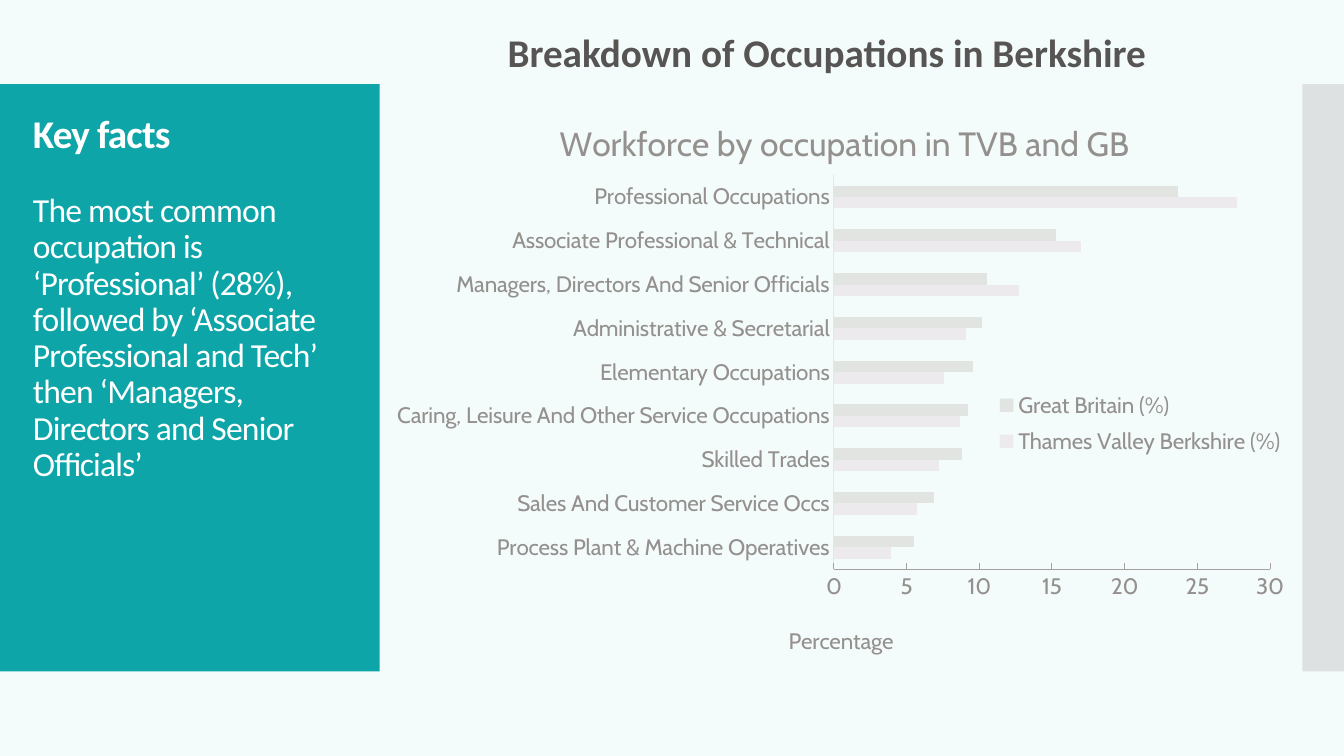
from lxml.etree import SubElement
from pptx import Presentation
from pptx.chart.data import CategoryChartData
from pptx.dml.color import RGBColor
from pptx.enum.chart import XL_CHART_TYPE, XL_LEGEND_POSITION, XL_TICK_MARK
from pptx.enum.shapes import MSO_SHAPE
from pptx.enum.text import PP_ALIGN
from pptx.oxml import parse_xml
from pptx.oxml.ns import nsdecls, qn
from pptx.util import Pt

COLORS = {
    "background": "F3FBFB",
    "teal": "0DA5A8",
    "gray": "C8C8C8",
    "white": "FFFFFF",
    "heading": "575553",
    "label": "93908E",
    "category_line": "E6E6E5",
    "value_line": "A6A19F",
    "berkshire": "ECEAED",
    "britain": "E1E4E1",
}
OCCUPATIONS = [
    ("Process Plant & Machine Operatives", 3.9, 5.5),
    ("Sales And Customer Service Occs", 5.7, 6.9),
    ("Skilled Trades", 7.2, 8.8),
    ("Caring, Leisure And Other Service Occupations", 8.7, 9.2),
    ("Elementary Occupations", 7.6, 9.6),
    ("Administrative & Secretarial", 9.1, 10.2),
    ("Managers, Directors And Senior Officials", 12.7, 10.5),
    ("Associate Professional & Technical", 17, 15.3),
    ("Professional Occupations", 27.7, 23.7),
]


def style_font(font, name, size, color, bold=False):
    font.name = name
    font.size = Pt(size)
    font.bold = bold
    font.color.rgb = RGBColor.from_string(COLORS[color])


def place_chart_part(element, inner=False, **fractions):
    for old_layout in element.findall(qn("c:layout")):
        element.remove(old_layout)
    layout = parse_xml(f"<c:layout {nsdecls('c')}><c:manualLayout/></c:layout>")
    if inner:
        SubElement(layout[0], qn("c:layoutTarget")).set("val", "inner")
    for axis in ("x", "y"):
        SubElement(layout[0], qn(f"c:{axis}Mode")).set("val", "edge")
    for key, value in fractions.items():
        SubElement(layout[0], qn(f"c:{key}")).set("val", str(value))
    overlay = element.find(qn("c:overlay"))
    if overlay is None:
        element.insert(0, layout)
    else:
        overlay.addprevious(layout)


presentation = Presentation()
presentation.slide_width = Pt(960)
presentation.slide_height = Pt(540)
slide = presentation.slides.add_slide(presentation.slide_layouts[6])
slide.background.fill.solid()
slide.background.fill.fore_color.rgb = RGBColor.from_string(COLORS["background"])

for left, width, color in [(0, 271.2, "teal"), (930.2, 29.8, "gray")]:
    panel = slide.shapes.add_shape(MSO_SHAPE.RECTANGLE, Pt(left), Pt(60), Pt(width), Pt(419.5))
    panel.shadow.inherit = False
    panel.fill.solid()
    panel.fill.fore_color.rgb = RGBColor.from_string(COLORS[color])
    panel.line.fill.background()
    if color == "gray":
        panel_color = panel.fill._xPr.find(".//" + qn("a:srgbClr"))
        SubElement(panel_color, qn("a:alpha")).set("val", "50000")

facts = slide.shapes.add_textbox(Pt(16.5), Pt(78.5), Pt(232), Pt(362))
facts.text_frame.word_wrap = True
facts.text_frame.text = (
    "Key facts\n"
    "The most common occupation is ‘Professional’ (28%), followed by "
    "‘Associate Professional and Tech’ then ‘Managers, Directors and Senior Officials’"
)
for paragraph, size, bold in zip(facts.text_frame.paragraphs, (28, 24), (True, False)):
    paragraph.line_spacing = 0.9
    style_font(paragraph.runs[0].font, "Calibri", size, "white", bold)
    paragraph.runs[0].font._element.set("spc", "-60")
facts.text_frame.paragraphs[0].space_after = Pt(26)

heading = slide.shapes.add_textbox(Pt(242), Pt(16.8), Pt(697), Pt(41))
heading.text_frame.word_wrap = True
heading.text_frame.text = "Breakdown of Occupations in Berkshire"
paragraph = heading.text_frame.paragraphs[0]
paragraph.alignment = PP_ALIGN.CENTER
style_font(paragraph.runs[0].font, "Calibri", 28, "heading", True)

names, berkshire, britain = zip(*OCCUPATIONS)
chart_data = CategoryChartData()
chart_data.categories = names
chart_data.add_series("Thames Valley Berkshire (%)", berkshire)
chart_data.add_series("Great Britain (%)", britain)
chart = slide.shapes.add_chart(
    XL_CHART_TYPE.BAR_CLUSTERED, Pt(270), Pt(60.5), Pt(660), Pt(417), chart_data
).chart
style_font(chart.font, "Cabin", 16, "label")

plot = chart.plots[0]
plot.gap_width = 182
plot.vary_by_categories = False
for series, color in zip(plot.series, ("berkshire", "britain")):
    series.format.fill.solid()
    series.format.fill.fore_color.rgb = RGBColor.from_string(COLORS[color])

value_axis = chart.value_axis
value_axis.minimum_scale = 0
value_axis.maximum_scale = 30
value_axis.major_unit = 5
value_axis.has_major_gridlines = False
for axis, tick, color in [
    (chart.category_axis, XL_TICK_MARK.NONE, "category_line"),
    (value_axis, XL_TICK_MARK.INSIDE, "value_line"),
]:
    axis.major_tick_mark = tick
    axis.minor_tick_mark = XL_TICK_MARK.NONE
    axis.format.line.width = Pt(0.75)
    axis.format.line.color.rgb = RGBColor.from_string(COLORS[color])
    style_font(axis.tick_labels.font, "Cabin", 16, "label")

for title, text, size, x, y in [
    (chart.chart_title, "Workforce by occupation in TVB and GB", 24, 0.19, 0.05),
    (value_axis.axis_title, "Percentage", 16, 0.44, 0.92),
]:
    title.text_frame.text = text
    style_font(title.text_frame.paragraphs[0].runs[0].font, "Cabin", size, "label")
    place_chart_part(title._element, x=x, y=y)

chart.has_legend = True
chart.legend.position = XL_LEGEND_POSITION.BOTTOM
chart.legend.include_in_layout = True
style_font(chart.legend.font, "Cabin", 16, "label")
place_chart_part(chart.legend._element, x=0.66, y=0.51, w=0.33, h=0.14)
place_chart_part(
    chart._chartSpace.chart.plotArea, inner=True, x=0.4935, y=0.155, w=0.472, h=0.675
)

presentation.save("out.pptx")
